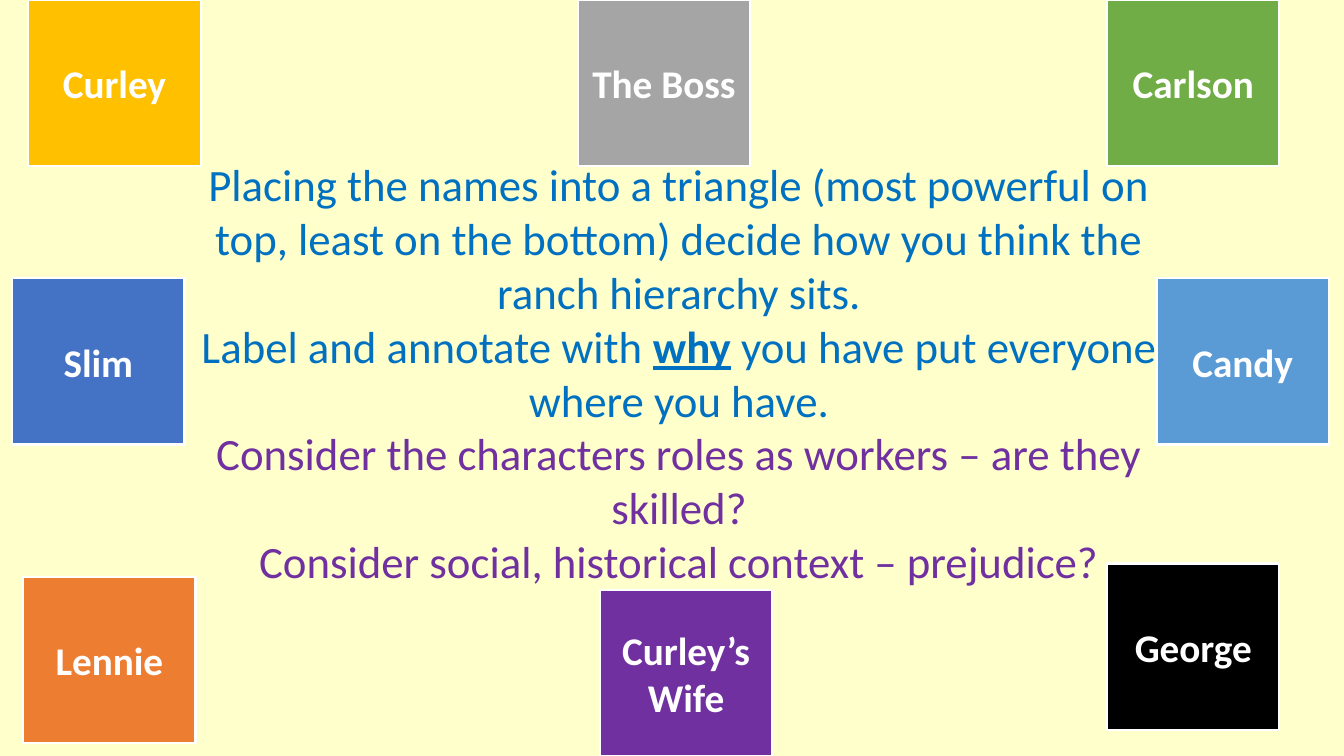
from pptx import Presentation
from pptx.dml.color import RGBColor
from pptx.enum.shapes import MSO_SHAPE
from pptx.enum.text import MSO_ANCHOR, PP_ALIGN
from pptx.util import Inches, Pt


def color(hex_value):
    return RGBColor.from_string(hex_value)


def add_span(para, text, hex_value, **formats):
    span = para.add_run()
    span.text = text
    span.font.color.rgb = color(hex_value)
    for name, value in {"name": "Calibri", **formats}.items():
        setattr(span.font, name, value)


# Page
deck = Presentation()
deck.slide_width, deck.slide_height = Inches(13.33), Inches(7.5)
page = deck.slides.add_slide(deck.slide_layouts[6])
page.background.fill.solid()
page.background.fill.fore_color.rgb = color("FFFFCC")

# Instructions in the middle
BLUE, PURPLE = "0070C0", "7030A0"
instructions = [
    (BLUE, ["Placing the names into a triangle (most powerful on top, least on "
            "the bottom) decide how you think the ranch hierarchy sits."]),
    (BLUE, ["Label and annotate with ", "why", " you have put everyone where you have."]),
    (PURPLE, ["Consider the characters roles as workers – are they skilled?"]),
    (PURPLE, ["Consider social, historical context – prejudice?"]),
]
box = page.shapes.add_textbox(Inches(1.86), Inches(1.51), Inches(9.75), Inches(5.49))
frame = box.text_frame
frame.word_wrap = True
for index, (hex_value, texts) in enumerate(instructions):
    para = frame.add_paragraph() if index else frame.paragraphs[0]
    para.alignment = PP_ALIGN.CENTER
    for text in texts:
        stressed = text == "why"
        add_span(para, text, hex_value, size=Pt(32), bold=stressed, underline=stressed)

# Character cards around the edge: name, left, top, fill
WIDTH, HEIGHT = 1.71, 1.65
TOP, MIDDLE, BOTTOM = 0, 2.76, 7.5 - HEIGHT
RIGHT = 10.98
characters = [
    ("The Boss", 5.73, TOP, "A5A5A5"),
    ("George", RIGHT, 5.59, "000000"),
    ("Slim", 0.12, MIDDLE, "4472C4"),
    ("Curley", 0.28, TOP, "FFC000"),
    ("Lennie", 0.23, 5.72, "ED7D31"),
    ("Candy", 11.47, MIDDLE, "5B9BD5"),
    ("Carlson", RIGHT, TOP, "70AD47"),
    ("Curley’s Wife", 5.95, BOTTOM, PURPLE),
]
for name, left, top, fill in characters:
    card = page.shapes.add_shape(MSO_SHAPE.RECTANGLE, Inches(left), Inches(top),
                                 Inches(WIDTH), Inches(HEIGHT))
    card.shadow.inherit = False
    card.fill.solid()
    card.fill.fore_color.rgb = color(fill)
    card.line.color.rgb = color("FFFFFF")
    card.line.width = Pt(1.5)
    card.text_frame.word_wrap = True
    card.text_frame.vertical_anchor = MSO_ANCHOR.MIDDLE
    para = card.text_frame.paragraphs[0]
    para.alignment = PP_ALIGN.CENTER
    add_span(para, name, "FFFFFF", size=Pt(28), bold=True)

deck.save("out.pptx")
